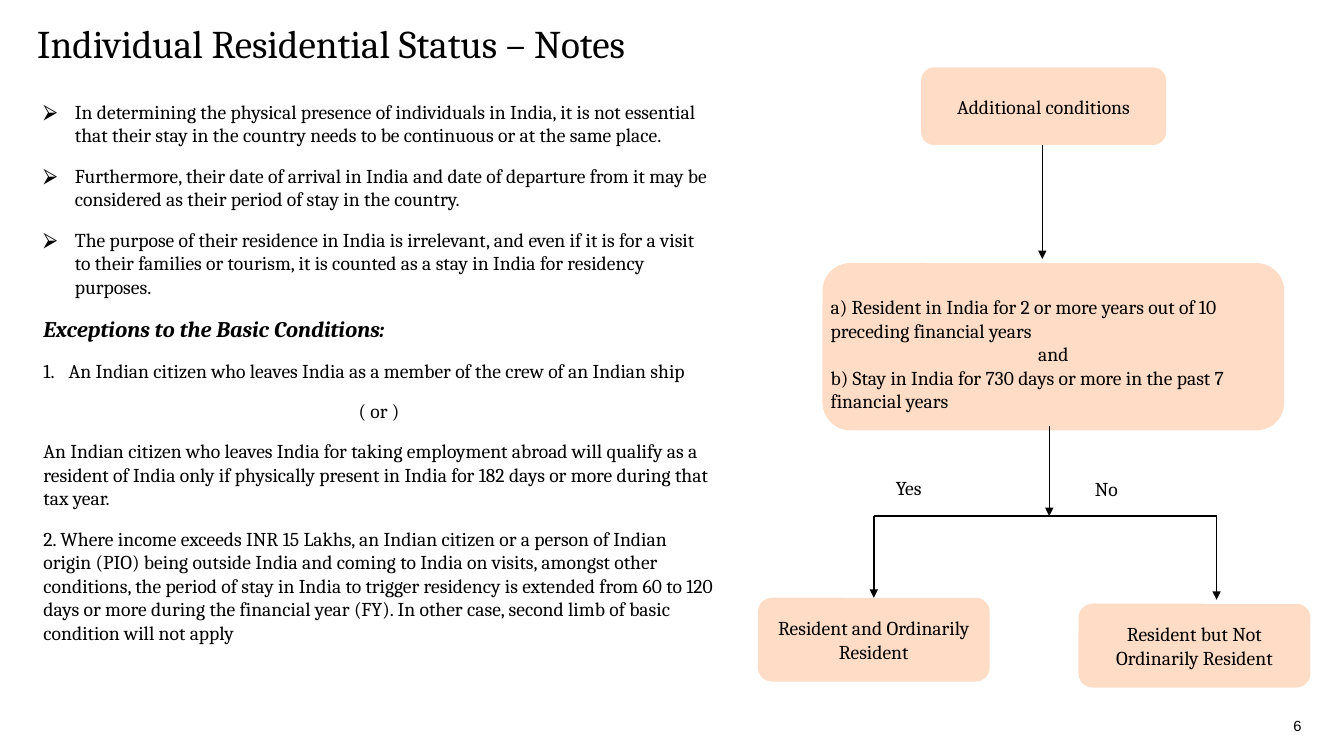
from lxml import etree
from pptx import Presentation
from pptx.dml.color import RGBColor
from pptx.enum.shapes import MSO_CONNECTOR, MSO_SHAPE
from pptx.enum.text import MSO_ANCHOR, MSO_AUTO_SIZE, PP_ALIGN
from pptx.oxml.ns import qn
from pptx.util import Pt

LEFT, MID, RIGHT = PP_ALIGN.LEFT, PP_ALIGN.CENTER, PP_ALIGN.RIGHT
TOP, CENTER, BOTTOM = MSO_ANCHOR.TOP, MSO_ANCHOR.MIDDLE, MSO_ANCHOR.BOTTOM
ROUND, LINE = MSO_SHAPE.ROUNDED_RECTANGLE, MSO_CONNECTOR.STRAIGHT
FIXED = MSO_AUTO_SIZE.NONE

TITLE = "Individual Residential Status – Notes"
NOTES = [
    ("bullet", "In determining the physical presence of individuals in India, it is not essential that their stay in the country needs to be continuous or at the same place."),
    ("bullet", "Furthermore, their date of arrival in India and date of departure from it may be considered as their period of stay in the country."),
    ("bullet", "The purpose of their residence in India is irrelevant, and even if it is for a visit to their families or tourism, it is counted as a stay in India for residency purposes."),
    ("head", "Exceptions to the Basic Conditions:"),
    ("number", "An Indian citizen who leaves India as a member of the crew of an Indian ship"),
    ("center", "( or )"),
    ("plain", "An Indian citizen who leaves India for taking employment abroad will qualify as a resident of India only if physically present in India for 182 days or more during that tax year."),
    ("plain", "2. Where income exceeds INR 15 Lakhs, an Indian citizen or a person of Indian origin (PIO) being outside India and coming to India on visits, amongst other conditions, the period of stay in India to trigger residency is extended from 60 to 120 days or more during the financial year (FY). In other case, second limb of basic condition will not apply"),
]
START = "Additional conditions"
TESTS = [
    (LEFT, "a) Resident in India for 2 or more years out of 10 preceding financial years"),
    (MID, "and"),
    (LEFT, "b) Stay in India for 730 days or more in the past 7 financial years"),
]
ENDS = [
    ("Yes", (640, 339.8), "Resident and Ordinarily Resident", (541.4, 427), 624.2),
    ("No", (782, 340.6), "Resident but Not Ordinarily Resident", (770.4, 431.3), 869),
]
PAGE = "6"

THEME = {
    "font": "Cambria", "page font": "Arial",
    "ink": RGBColor(0, 0, 0), "box": RGBColor(0xFF, 0xDC, 0xC6),
    "title": 28, "head": 16, "text": 14, "page": 10.5,
}
PAD = (7.2, 3.6, 7.2, 3.6)
BARE = (0, 0, 0, 0)
GAP = 12
INDENT = {"bullet": 22.5, "number": 18}
MARK = {"bullet": ("a:buChar", "char", "⮚"), "number": ("a:buAutoNum", "type", "arabicPeriod")}
FORK = 368.6


def place(shape, left, top, width, height):
    shape.left, shape.top = Pt(left), Pt(top)
    shape.width, shape.height = Pt(width), Pt(height)


def setup(frame, pad, anchor):
    frame.word_wrap, frame.auto_size = True, FIXED
    frame.vertical_anchor = anchor
    frame.margin_left, frame.margin_top, frame.margin_right, frame.margin_bottom = map(Pt, pad)


def style(para, align=LEFT, size=THEME["text"], font=THEME["font"]):
    para.alignment = align
    for run in para.runs:
        run.font.size, run.font.name = Pt(size), font
        run.font.color.rgb = THEME["ink"]


def fill(frame, lines, size=THEME["text"], font=THEME["font"]):
    frame.text = "\n".join(text for _, text in lines)
    for para, (align, _) in zip(frame.paragraphs, lines):
        style(para, align, size, font)


def label(slide, text, area, align=LEFT, anchor=TOP, **look):
    frame = slide.shapes.add_textbox(*map(Pt, area)).text_frame
    setup(frame, BARE, anchor)
    fill(frame, [(align, text)], **look)


def box(slide, lines, area, pad=PAD, anchor=CENTER):
    shape = slide.shapes.add_shape(ROUND, *map(Pt, area))
    shape.shadow.inherit = False
    shape.fill.solid()
    shape.fill.fore_color.rgb = THEME["box"]
    shape.line.fill.background()
    setup(shape.text_frame, pad, anchor)
    fill(shape.text_frame, lines)


def link(slide, start, end, arrow=True):
    line = slide.shapes.add_connector(LINE, *map(Pt, start + end))
    line.line.color.rgb, line.line.width = THEME["ink"], Pt(1)
    if arrow:
        etree.SubElement(line.line._get_or_add_ln(), qn("a:tailEnd"), type="triangle")
    etree.SubElement(line._element.spPr, qn("a:effectLst"))


def mark(para, kind):
    props = para._p.get_or_add_pPr()
    indent = INDENT.get(kind, 0)
    props.set("marL", str(Pt(indent)))
    props.set("indent", str(Pt(-indent)))
    if kind in MARK:
        tag, key, value = MARK[kind]
        color = etree.SubElement(props, qn("a:buClr"))
        etree.SubElement(color, qn("a:srgbClr"), val=str(THEME["ink"]))
        etree.SubElement(props, qn(tag), {key: value})
    else:
        etree.SubElement(props, qn("a:buNone"))


def write(slide):
    title, body = slide.placeholders
    place(title, 26.6, 13.7, 890, 33.8)
    setup(title.text_frame, BARE, TOP)
    fill(title.text_frame, [(LEFT, TITLE)], THEME["title"])

    place(body, 23.8, 67.7, 494, 433.4)
    frame = body.text_frame
    setup(frame, PAD, TOP)
    frame.text = "\n".join(text for _, text in NOTES)
    for order, (para, (kind, _)) in enumerate(zip(frame.paragraphs, NOTES)):
        mark(para, kind)
        para.space_before = Pt(GAP if order else 0)
        style(para, MID if kind == "center" else LEFT, THEME["head" if kind == "head" else "text"])
        for run in para.runs:
            run.font.bold = run.font.italic = kind == "head"


def chart(slide):
    link(slide, (744.5, 103.7), (744.5, 185))
    box(slide, [(MID, START)], (658, 48.2, 175, 55.4))
    box(slide, TESTS, (587.5, 187.9, 329.8, 119.5), (0, 17, 0, 0), TOP)
    link(slide, (749.5, 304.6), (749.5, FORK))
    link(slide, (ENDS[0][-1], FORK), (ENDS[-1][-1], FORK), False)
    for answer, spot, result, (left, top), drop in ENDS:
        link(slide, (drop, FORK), (drop, min(top, 428.4)))
        box(slide, [(MID, result)], (left, top, 165.6, 59.8))
        label(slide, answer, spot + (90, 20.9))


def main():
    deck = Presentation()
    deck.slide_width, deck.slide_height = Pt(960), Pt(540)
    slide = deck.slides.add_slide(deck.slide_layouts[1])
    write(slide)
    chart(slide)
    label(slide, PAGE, (905.8, 511.9, 23.8, 13), RIGHT, BOTTOM,
          size=THEME["page"], font=THEME["page font"])
    deck.save("out.pptx")


if __name__ == "__main__":
    main()
